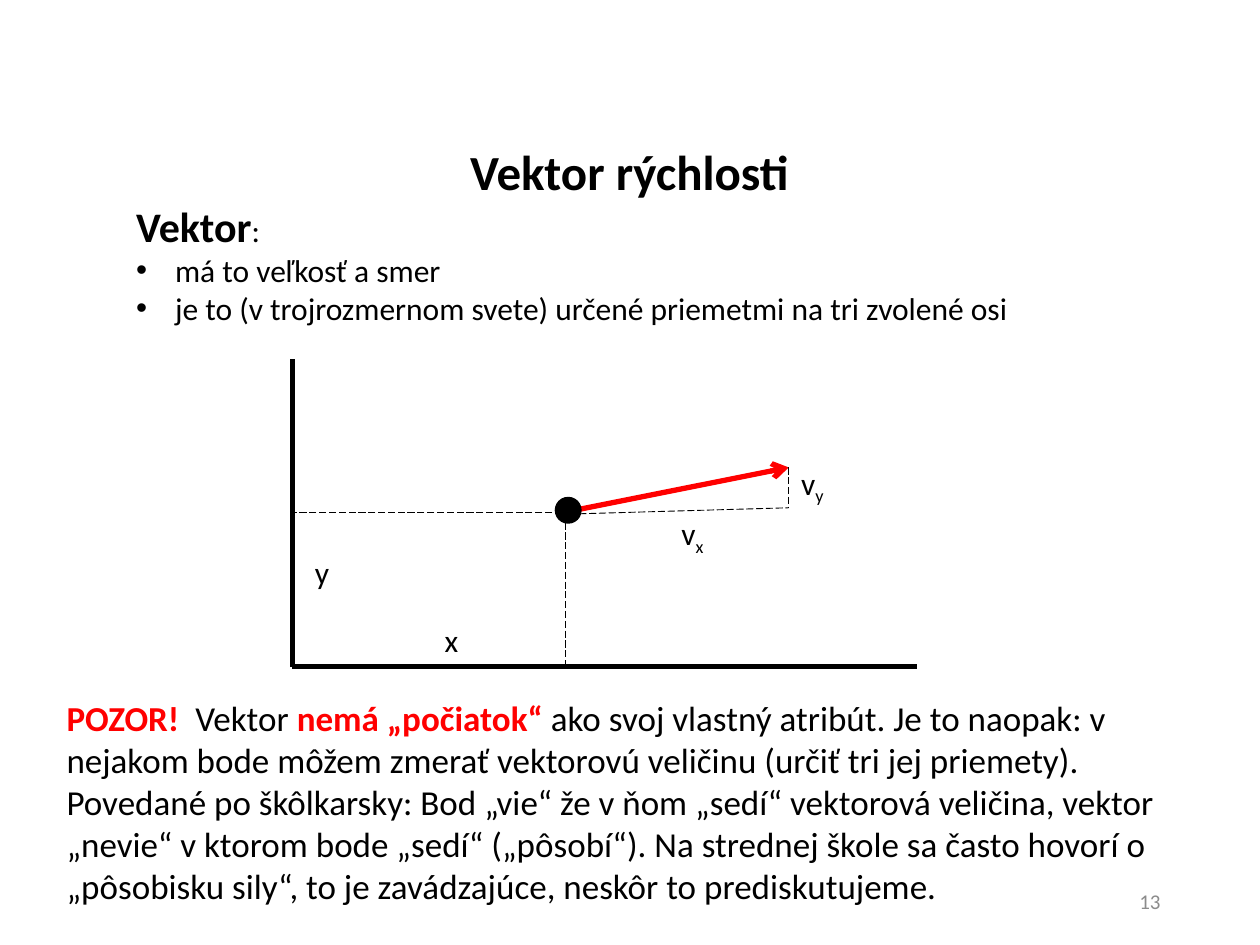
from lxml import etree
from pptx import Presentation
from pptx.dml.color import RGBColor
from pptx.enum.dml import MSO_LINE
from pptx.enum.shapes import MSO_CONNECTOR, MSO_SHAPE
from pptx.enum.text import MSO_ANCHOR, MSO_AUTO_SIZE, PP_ALIGN
from pptx.oxml.ns import qn
from pptx.util import Inches, Pt

BLACK, RED, GREY = "000000", "FF0000", "8C8C8C"
FONT = "Calibri"


def color(hex_code):
    return RGBColor.from_string(hex_code)


def place(shape, left, top, width, height):
    shape.left, shape.top = Inches(left), Inches(top)
    shape.width, shape.height = Inches(width), Inches(height)


def add_run(paragraph, text, size, hex_code=BLACK, bold=False, subscript=False):
    run = paragraph.add_run()
    run.text = text
    font = run.font
    font.name, font.size, font.bold = FONT, Pt(size), bold
    font.color.rgb = color(hex_code)
    if subscript:
        run._r.get_or_add_rPr().set("baseline", "-25000")


def prepare_frame(shape, anchor=MSO_ANCHOR.TOP):
    frame = shape.text_frame
    frame.word_wrap = True
    frame.auto_size = MSO_AUTO_SIZE.NONE
    frame.vertical_anchor = anchor
    return frame


def set_bullet(paragraph, bullet=None, indent=0.0):
    properties = paragraph._p.get_or_add_pPr()
    properties.set("marL", str(Inches(indent)))
    properties.set("indent", str(-Inches(indent)))
    if bullet:
        etree.SubElement(properties, qn("a:buFont")).set("typeface", "Arial")
        etree.SubElement(properties, qn("a:buChar")).set("char", bullet)
    else:
        etree.SubElement(properties, qn("a:buNone"))


def add_text(slide, box, runs, align=PP_ALIGN.LEFT, anchor=MSO_ANCHOR.TOP):
    label = slide.shapes.add_textbox(*map(Inches, box))
    paragraph = prepare_frame(label, anchor).paragraphs[0]
    paragraph.alignment = align
    for run in runs:
        add_run(paragraph, *run)


def add_line(slide, start, end, hex_code=BLACK, width=3, dashed=False, arrow=False):
    connector = slide.shapes.add_connector(
        MSO_CONNECTOR.STRAIGHT, *map(Inches, start + end))
    line = connector.line
    line.color.rgb = color(hex_code)
    line.width = Pt(width)
    if dashed:
        line.dash_style = MSO_LINE.LONG_DASH
    if arrow:
        etree.SubElement(line._get_or_add_ln(), qn("a:tailEnd")).set("type", "arrow")
    etree.SubElement(connector._element.spPr, qn("a:effectLst"))


def add_heading(slide):
    title = slide.shapes.title
    place(title, 0.98, 1.07, 8.03, 0.55)
    heading = prepare_frame(title).paragraphs[0]
    heading.alignment = PP_ALIGN.CENTER
    add_run(heading, "Vektor rýchlosti", 28, bold=True)


def add_properties(slide):
    body = slide.placeholders[1]
    place(body, 0.98, 1.54, 8.03, 1.11)
    frame = prepare_frame(body)
    intro = frame.paragraphs[0]
    intro.space_before = Pt(0)
    set_bullet(intro)
    add_run(intro, "Vektor", 24, bold=True)
    add_run(intro, ":", 18)
    for text in ("má to veľkosť a smer",
                 "je to (v trojrozmernom svete) určené priemetmi na tri zvolené osi "):
        item = frame.add_paragraph()
        item.space_before = Pt(0)
        set_bullet(item, "•", 0.31)
        add_run(item, text, 18)


def add_diagram(slide):
    origin, tip, corner = (2.32, 5.29), (6.26, 3.71), (6.26, 4.03)

    # Axes and velocity vector
    add_line(slide, (2.32, 2.85), origin)
    add_line(slide, origin, (7.28, 5.29))
    add_line(slide, (4.46, 4.07), tip, RED, arrow=True)

    # Projections of the position
    for start, end in (((4.49, 4.07), (4.49, 5.29)), ((4.46, 4.07), (2.32, 4.07))):
        add_line(slide, start, end, width=0.5, dashed=True)

    # Moving point
    point = slide.shapes.add_shape(
        MSO_SHAPE.OVAL, *map(Inches, (4.41, 3.95, 0.2, 0.2)))
    point.shadow.inherit = False
    point.fill.solid()
    point.fill.fore_color.rgb = color(BLACK)
    point.line.color.rgb = color(BLACK)
    point.line.width = Pt(1)

    # Components of the velocity
    for start in ((4.52, 4.08), tip):
        add_line(slide, start, corner, width=0.5, dashed=True)

    # Labels
    for left, top, letter, index in ((3.43, 4.88, "x", ""), (2.4, 4.34, "y", ""),
                                     (5.31, 4.03, "v", "x"), (6.26, 3.63, "v", "y")):
        runs = [(letter, 18)]
        if index:
            runs.append((index, 18, BLACK, False, True))
        add_text(slide, (left, top, 0.39, 0.4), runs)


def add_warning(slide):
    add_text(slide, (0.43, 5.48, 9.4, 1.78), [
        ("POZOR!  ", 20, RED, True),
        ("Vektor ", 20),
        ("nemá „počiatok“ ", 20, RED, True),
        ("ako svoj vlastný atribút. Je to naopak: v nejakom bode môžem zmerať "
         "vektorovú veličinu (určiť tri jej priemety). Povedané po škôlkarsky: "
         "Bod „vie“ že v ňom „sedí“ vektorová veličina, vektor „nevie“ v ktorom "
         "bode „sedí“ („pôsobí“). Na strednej škole sa často hovorí o „pôsobisku "
         "sily“, to je zavádzajúce, neskôr to prediskutujeme.", 20),
    ])


def main():
    deck = Presentation()
    deck.slide_width, deck.slide_height = Inches(10), Inches(7.5)
    slide = deck.slides.add_slide(deck.slide_layouts[1])
    add_heading(slide)
    add_properties(slide)
    add_diagram(slide)
    # Page number
    add_text(slide, (7.06, 6.95, 2.25, 0.4), [("13", 12, GREY)],
             PP_ALIGN.RIGHT, MSO_ANCHOR.MIDDLE)
    add_warning(slide)
    deck.save("out.pptx")


main()
